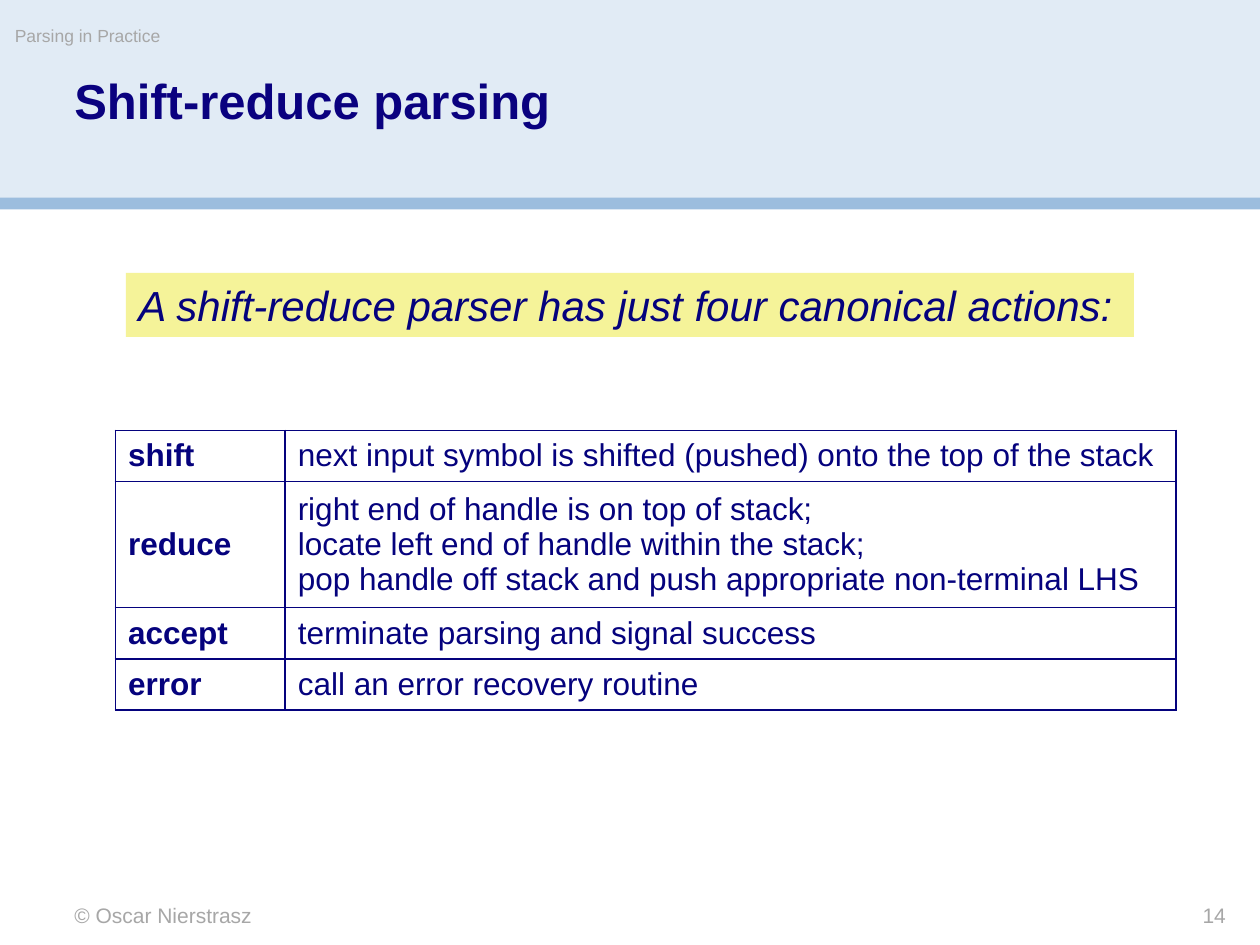
from lxml import etree
from pptx import Presentation
from pptx.dml.color import RGBColor
from pptx.enum.shapes import MSO_SHAPE
from pptx.enum.text import MSO_ANCHOR, PP_ALIGN
from pptx.oxml.ns import qn
from pptx.util import Pt

RECT = MSO_SHAPE.RECTANGLE
TOP, MIDDLE = MSO_ANCHOR.TOP, MSO_ANCHOR.MIDDLE
LEFT, RIGHT = PP_ALIGN.LEFT, PP_ALIGN.RIGHT

HEADER = RGBColor(0xE1, 0xEB, 0xF5)
STRIPE = RGBColor(0x9C, 0xBD, 0xDE)
YELLOW = RGBColor(0xF5, 0xF3, 0x99)
TITLE = RGBColor(0x0A, 0x01, 0x7F)
NAVY = RGBColor(0x05, 0x02, 0x7D)
GREY = RGBColor(0xA7, 0xA7, 0xA7)


class SlideBuilder:
    font = "Arial"

    def __init__(self, slide):
        self.slide = slide

    def style(self, tf, text, size, color, bold=False, italic=False,
              align=LEFT, spacing=None):
        tf.text = text
        for p in tf.paragraphs:
            p.alignment = align
            if spacing:
                p.line_spacing = spacing
            for r in p.runs:
                r.font.name = self.font
                r.font.size = Pt(size)
                r.font.bold = bold
                r.font.italic = italic
                r.font.color.rgb = color

    def box(self, x, y, w, h, fill):
        sp = self.slide.shapes.add_shape(RECT, Pt(x), Pt(y), Pt(w), Pt(h))
        sp.shadow.inherit = False
        sp.fill.solid()
        sp.fill.fore_color.rgb = fill
        sp.line.fill.background()
        return sp

    def text(self, x, y, w, h, text, size, color, **style):
        sp = self.slide.shapes.add_textbox(Pt(x), Pt(y), Pt(w), Pt(h))
        tf = sp.text_frame
        tf.word_wrap = True
        tf.vertical_anchor = TOP
        tf.margin_left = tf.margin_right = tf.margin_top = tf.margin_bottom = 0
        self.style(tf, text, size, color, **style)

    def banner(self, x, y, w, h, text, size, color, fill, **style):
        tf = self.box(x, y, w, h, fill).text_frame
        tf.word_wrap = True
        tf.vertical_anchor = MIDDLE
        self.style(tf, text, size, color, **style)

    def borders(self, cell, color, width):
        tc_pr = cell._tc.get_or_add_tcPr()
        for side in ("a:lnL", "a:lnR", "a:lnT", "a:lnB"):
            ln = etree.SubElement(tc_pr, qn(side), w=str(Pt(width)))
            solid = etree.SubElement(ln, qn("a:solidFill"))
            etree.SubElement(solid, qn("a:srgbClr"), val=str(color))

    def table(self, x, y, widths, heights, rows, size, color):
        frame = self.slide.shapes.add_table(
            len(heights), len(widths), Pt(x), Pt(y),
            Pt(sum(widths)), Pt(sum(heights)))
        table = frame.table
        table.first_row = table.horz_banding = False
        for column, width in zip(table.columns, widths):
            column.width = Pt(width)
        for row, height, texts in zip(table.rows, heights, rows):
            row.height = Pt(height)
            for i, (cell, text) in enumerate(zip(row.cells, texts)):
                self.borders(cell, color, 1)
                cell.fill.background()
                cell.vertical_anchor = MIDDLE
                self.style(cell.text_frame, text, size, color, bold=i == 0)


ACTIONS = [
    ("shift", "next input symbol is shifted (pushed) onto the top of the stack"),
    ("reduce", "right end of handle is on top of stack;\v"
               "locate left end of handle within the stack;\v"
               "pop handle off stack and push appropriate non-terminal LHS"),
    ("accept", "terminate parsing and signal success"),
    ("error", "call an error recovery routine"),
]


def main():
    prs = Presentation()
    prs.slide_width, prs.slide_height = Pt(720), Pt(540)
    s = SlideBuilder(prs.slides.add_slide(prs.slide_layouts[6]))

    # Header band
    s.box(0, 0, 720, 114, HEADER)
    s.box(0, 113, 720, 6.75, STRIPE)
    s.text(8.5, 14.5, 425, 20, "Parsing in Practice", 10, GREY)
    s.text(42.5, 44, 636, 64, "Shift-reduce parsing", 28, TITLE,
           bold=True, spacing=0.9)

    # Parser actions
    s.banner(72, 156, 576, 36.5,
             "A shift-reduce parser has just four canonical actions:",
             24, NAVY, YELLOW, italic=True)
    s.table(66, 246, [97, 509], [29.25, 72, 29.25, 29.25], ACTIONS, 18, NAVY)

    # Footer
    s.text(42.5, 516, 300, 14.5, "© Oscar Nierstrasz", 12, GREY)
    s.text(594, 516, 106.5, 14.5, "14", 12, GREY, align=RIGHT)

    prs.save("out.pptx")


if __name__ == "__main__":
    main()
